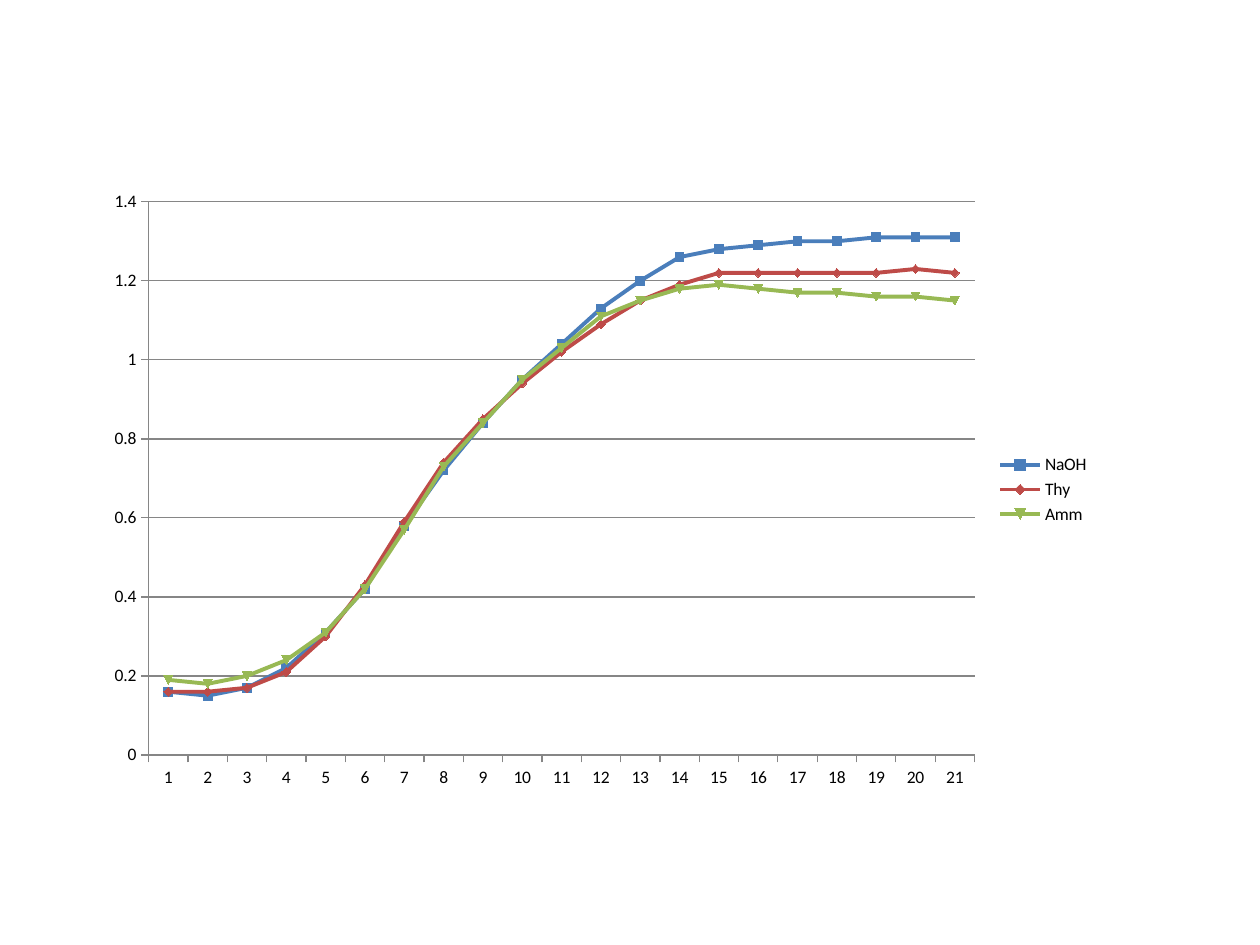
from pptx import Presentation
from pptx.chart.data import CategoryChartData
from pptx.dml.color import RGBColor
from pptx.enum.chart import XL_CHART_TYPE, XL_LEGEND_POSITION, XL_TICK_MARK
from pptx.util import Inches, Pt

LINE_MARKERS = XL_CHART_TYPE.LINE_MARKERS
LEGEND_RIGHT = XL_LEGEND_POSITION.RIGHT
TICK_OUTSIDE = XL_TICK_MARK.OUTSIDE
TICK_NONE = XL_TICK_MARK.NONE
BLANK_LAYOUT = 6

COLORS = {
    "text": "000000",
    "axis": "868686",
    "NaOH": "4A7EBB",
    "Thy": "BE4B48",
    "Amm": "98B954",
}

GROWTH = {
    "NaOH": [0.16, 0.15, 0.17, 0.22, 0.31, 0.42, 0.58, 0.72, 0.84, 0.95, 1.04,
             1.13, 1.2, 1.26, 1.28, 1.29, 1.3, 1.3, 1.31, 1.31, 1.31],
    "Thy": [0.16, 0.16, 0.17, 0.21, 0.3, 0.43, 0.59, 0.74, 0.85, 0.94, 1.02,
            1.09, 1.15, 1.19, 1.22, 1.22, 1.22, 1.22, 1.22, 1.23, 1.22],
    "Amm": [0.19, 0.18, 0.2, 0.24, 0.31, 0.42, 0.57, 0.73, 0.84, 0.95, 1.03,
            1.11, 1.15, 1.18, 1.19, 1.18, 1.17, 1.17, 1.16, 1.16, 1.15],
}


class SlideBuilder:
    """Holds the style and the current slide; lengths are shares of its size."""

    font_name = "Calibri"
    font_size = Pt(10)
    axis_width = Pt(0.75)
    series_width = Pt(2.25)

    def __init__(self, deck):
        self.width, self.height = deck.slide_width, deck.slide_height
        self.slide = deck.slides.add_slide(deck.slide_layouts[BLANK_LAYOUT])

    def color_line(self, line, name, width):
        line.color.rgb = RGBColor.from_string(COLORS[name])
        line.width = width

    def style_axis(self, axis):
        axis.major_tick_mark = TICK_OUTSIDE
        axis.minor_tick_mark = TICK_NONE
        self.color_line(axis.format.line, "axis", self.axis_width)

    def line_chart(self, left, top, width, height, values_by_name):
        data = CategoryChartData()
        count = len(next(iter(values_by_name.values())))
        data.categories = [str(number) for number in range(1, count + 1)]
        for name, values in values_by_name.items():
            data.add_series(name, values)
        chart = self.slide.shapes.add_chart(
            LINE_MARKERS,
            round(left * self.width), round(top * self.height),
            round(width * self.width), round(height * self.height), data,
        ).chart

        chart.has_title = False
        chart.font.name = self.font_name
        chart.font.size = self.font_size
        chart.font.color.rgb = RGBColor.from_string(COLORS["text"])
        chart.has_legend = True
        chart.legend.position = LEGEND_RIGHT
        chart.legend.include_in_layout = False

        self.style_axis(chart.category_axis)
        value_axis = chart.value_axis
        self.style_axis(value_axis)
        value_axis.minimum_scale, value_axis.maximum_scale = 0, 1.4
        value_axis.major_unit = 0.2
        value_axis.has_major_gridlines = True
        self.color_line(value_axis.major_gridlines.format.line, "axis",
                        self.axis_width)

        plot = chart.plots[0]
        plot.vary_by_categories = False
        for series in plot.series:
            series.smooth = False
            self.color_line(series.format.line, series.name, self.series_width)


def main():
    deck = Presentation()
    deck.slide_width, deck.slide_height = Inches(10), Inches(7.5)
    builder = SlideBuilder(deck)
    builder.line_chart(0.075, 0.19, 0.8, 0.656, GROWTH)
    deck.save("out.pptx")


if __name__ == "__main__":
    main()
